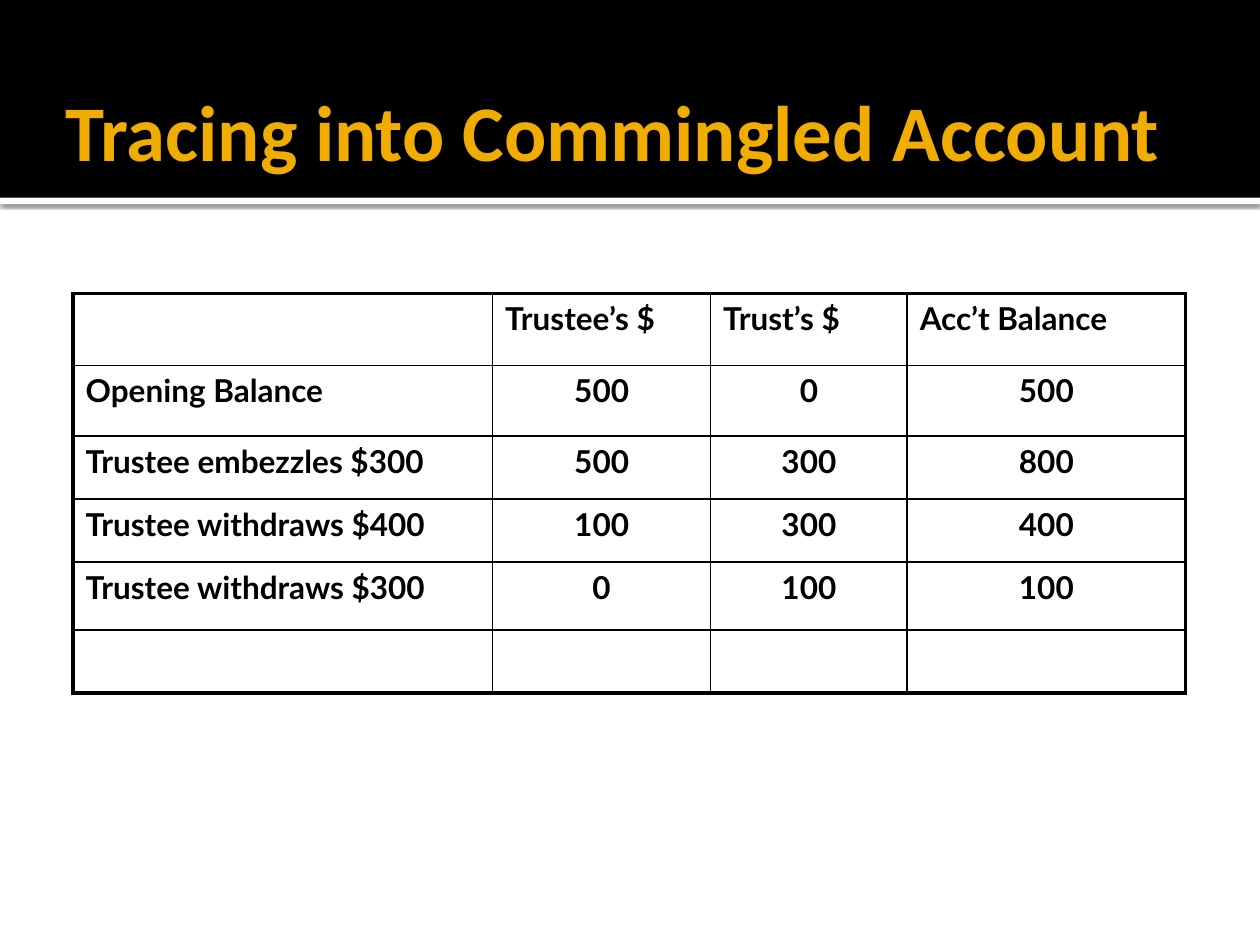
from dataclasses import dataclass

from lxml import etree
from pptx import Presentation
from pptx import util as u
from pptx.dml.color import RGBColor
from pptx.enum import shapes, text
from pptx.oxml import parse_xml
from pptx.oxml.ns import nsdecls, qn


@dataclass(frozen=True)
class Theme:
    black: str = "000000"
    white: str = "FFFFFF"
    gold: str = "F0AD00"
    title_font: str = "Calibri"
    table_font: str = "Lato"
    title_size: float = 45
    table_size: float = 18
    inner_line: float = 1
    outer_line: float = 2.25


THEME = Theme()
WIDTH, HEIGHT = 10, 7.5
BAND_HEIGHT = 1.57
RULE_HEIGHT = 0.05

# Ledger: grid measures in inches, then the entries
LEDGER_LEFT, LEDGER_TOP = 0.58, 2.33
COLUMNS = [3.33, 1.73, 1.56, 2.21]
ROWS = [0.57, 0.56, 0.5, 0.5, 0.54, 0.5]
ENTRIES = [
    ["", "Trustee’s $", "Trust’s $", "Acc’t Balance"],
    ["Opening Balance", "500", "0", "500"],
    ["Trustee embezzles $300", "500", "300", "800"],
    ["Trustee withdraws $400", "100", "300", "400"],
    ["Trustee withdraws $300", "0", "100", "100"],
    ["", "", "", ""],
]


def style_font(font, name, size, color):
    font.name, font.size, font.bold = name, u.Pt(size), True
    font.color.rgb = RGBColor.from_string(color)


def add_strip(slide, top, height, color):
    """Full-width plain strip."""
    strip = slide.shapes.add_shape(
        shapes.MSO_SHAPE.RECTANGLE, 0, u.Inches(top), u.Inches(WIDTH), u.Inches(height))
    strip.shadow.inherit = False
    strip.fill.solid()
    strip.fill.fore_color.rgb = RGBColor.from_string(color)
    strip.line.fill.background()
    return strip


def cast_shadow(strip):
    effects = strip._element.spPr.find(qn("a:effectLst"))
    effects.append(parse_xml(
        f'<a:outerShdw {nsdecls("a")} blurRad="{u.Pt(2.5)}" dist="{u.Pt(0.8)}" '
        f'dir="5400000" algn="t" rotWithShape="0"><a:srgbClr val="{THEME.black}">'
        '<a:alpha val="60000"/></a:srgbClr></a:outerShdw>'))


def set_title(slide, wording):
    title = slide.shapes.title
    title.left, title.top = u.Inches(0.42), u.Inches(0.23)
    title.width, title.height = u.Inches(9.36), u.Inches(1.6)
    frame = title.text_frame
    frame.text = wording
    frame.word_wrap = True
    frame.auto_size = text.MSO_AUTO_SIZE.NONE
    frame.vertical_anchor = text.MSO_ANCHOR.MIDDLE
    frame.margin_left = u.Inches(0.1)
    frame.margin_right = frame.margin_top = frame.margin_bottom = u.Inches(0.05)
    heading = frame.paragraphs[0]
    heading.alignment = text.PP_ALIGN.LEFT
    style_font(heading.runs[0].font, THEME.title_font, THEME.title_size, THEME.gold)
    # Bring the title in front of the band
    slide.shapes._spTree.append(title._element)


def set_borders(cell, outer_sides):
    """Rule all four sides, heavier on the table's outer edge."""
    properties = cell._tc.get_or_add_tcPr()
    for side in "LRTB":
        width = THEME.outer_line if side in outer_sides else THEME.inner_line
        line = etree.SubElement(properties, qn(f"a:ln{side}"), w=str(u.Pt(width)))
        fill = etree.SubElement(line, qn("a:solidFill"))
        etree.SubElement(fill, qn("a:srgbClr"), val=THEME.black)


def fill_cell(cell, wording, centred):
    cell.fill.background()
    cell.margin_left = cell.margin_right = u.Inches(0.1)
    cell.margin_top = cell.margin_bottom = u.Inches(0.05)
    cell.text_frame.text = wording
    entry = cell.text_frame.paragraphs[0]
    entry.alignment = text.PP_ALIGN.CENTER if centred else text.PP_ALIGN.LEFT
    for run in entry.runs:
        style_font(run.font, THEME.table_font, THEME.table_size, THEME.black)


def add_ledger(slide):
    ledger = slide.shapes.add_table(
        len(ROWS), len(COLUMNS), u.Inches(LEDGER_LEFT), u.Inches(LEDGER_TOP),
        u.Inches(sum(COLUMNS)), u.Inches(sum(ROWS))).table
    ledger.first_row = ledger.horz_banding = False
    for column, width in zip(ledger.columns, COLUMNS):
        column.width = u.Inches(width)
    for row, height in zip(ledger.rows, ROWS):
        row.height = u.Inches(height)

    last_row, last_column = len(ROWS) - 1, len(COLUMNS) - 1
    for r, entries in enumerate(ENTRIES):
        for c, wording in enumerate(entries):
            edges = {"L": c == 0, "R": c == last_column, "T": r == 0, "B": r == last_row}
            cell = ledger.cell(r, c)
            set_borders(cell, [side for side, outer in edges.items() if outer])
            fill_cell(cell, wording, centred=r > 0 and c > 0)


def main():
    deck = Presentation()
    deck.slide_width, deck.slide_height = u.Inches(WIDTH), u.Inches(HEIGHT)
    slide = deck.slides.add_slide(deck.slide_layouts[5])

    # Header: white rule with a shadow, black band, title
    cast_shadow(add_strip(slide, BAND_HEIGHT, RULE_HEIGHT, THEME.white))
    add_strip(slide, 0, BAND_HEIGHT, THEME.black)
    set_title(slide, "Tracing into Commingled Account")

    add_ledger(slide)
    deck.save("out.pptx")


if __name__ == "__main__":
    main()
